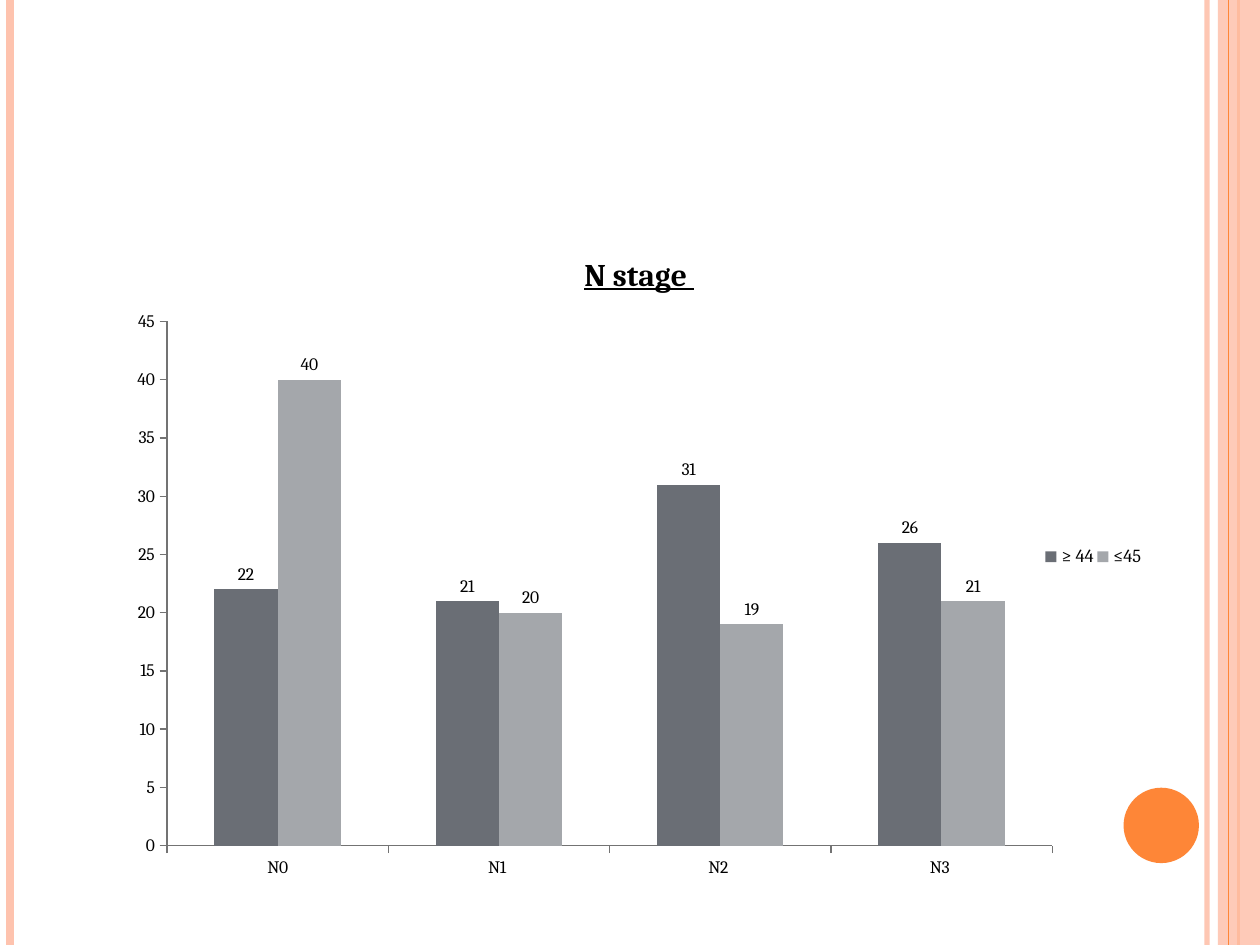
from lxml.etree import SubElement
from pptx import Presentation
from pptx.chart.data import CategoryChartData
from pptx.dml.color import RGBColor
from pptx.enum.chart import (XL_CHART_TYPE, XL_LABEL_POSITION,
                             XL_LEGEND_POSITION, XL_TICK_MARK)
from pptx.enum.shapes import MSO_CONNECTOR, MSO_SHAPE
from pptx.oxml.ns import qn
from pptx.util import Cm, Pt

WIDE, HIGH = 25.4, 19.05
PINK, ORANGE, GREY, BLACK = "FEC3AE", "FE8637", "737373", "000000"


def color(code):
    return RGBColor.from_string(code)


def fade(fill, percent):
    """Set the opacity of a solid fill element."""
    SubElement(fill[0], qn("a:alpha"), val=str(percent * 1000))


def place(part, index, **box):
    """Give a chart part a manual layout, in fractions of the chart."""
    for old in part.findall(qn("c:layout")):
        part.remove(old)
    layout = SubElement(part, qn("c:layout"))
    part.insert(index, layout)
    manual = SubElement(layout, qn("c:manualLayout"))
    if part.tag == qn("c:plotArea"):
        SubElement(manual, qn("c:layoutTarget"), val="inner")
    for mode in ("xMode", "yMode"):
        SubElement(manual, qn(f"c:{mode}"), val="edge")
    for name, value in box.items():
        SubElement(manual, qn(f"c:{name}"), val=str(value))


class Deck:
    font = "Cambria"

    def __init__(self):
        self.show = Presentation()
        self.show.slide_width, self.show.slide_height = Cm(WIDE), Cm(HIGH)
        self.slide = self.show.slides.add_slide(self.show.slide_layouts[6])

    def rule(self, x, code, width, alpha=100):
        """Draw a line down the full height of the slide."""
        line = self.slide.shapes.add_connector(
            MSO_CONNECTOR.STRAIGHT, Cm(x), Cm(0), Cm(x), Cm(HIGH))
        line.line.color.rgb = color(code)
        line.line.width = Pt(width)
        props = line._element.spPr
        SubElement(props, qn("a:effectLst"))
        if alpha < 100:
            fade(props.find(qn("a:ln")).find(qn("a:solidFill")), alpha)

    def shape(self, kind, x, y, w, h, code, alpha=100):
        item = self.slide.shapes.add_shape(kind, Cm(x), Cm(y), Cm(w), Cm(h))
        item.shadow.inherit = False
        item.fill.solid()
        item.fill.fore_color.rgb = color(code)
        item.line.fill.background()
        if alpha < 100:
            fade(item._element.spPr.find(qn("a:solidFill")), alpha)

    def style(self, font, size, bold=False):
        font.name, font.size, font.bold = self.font, Pt(size), bold
        font.color.rgb = color(BLACK)

    def chart(self, x, y, w, h, title, cats, series):
        data = CategoryChartData()
        data.categories = cats
        for name, values, _ in series:
            data.add_series(name, values)
        chart = self.slide.shapes.add_chart(
            XL_CHART_TYPE.COLUMN_CLUSTERED, Cm(x), Cm(y), Cm(w), Cm(h),
            data).chart
        self.style(chart.font, 10)
        self.title(chart, title)
        self.bars(chart.plots[0], series)
        for axis in (chart.category_axis, chart.value_axis):
            axis.has_major_gridlines = False
            axis.major_tick_mark = XL_TICK_MARK.OUTSIDE
            axis.minor_tick_mark = XL_TICK_MARK.NONE
            axis.format.line.color.rgb = color(GREY)
            self.style(axis.tick_labels.font, 10)
        chart.value_axis.minimum_scale = 0
        chart.value_axis.maximum_scale = 45
        chart.value_axis.major_unit = 5
        self.legend(chart)
        area = chart._chartSpace.chart.plotArea
        place(area, 0, x=0.05, y=0.15, w=0.86, h=0.78)

    def title(self, chart, text):
        chart.has_title = True
        head = chart.chart_title
        head.text_frame.text = text
        font = head.text_frame.paragraphs[0].runs[0].font
        self.style(font, 18, True)
        font.underline = True
        part = head._element
        place(part, 1, x=0.45, y=0.04)
        part.find(qn("c:overlay")).set("val", "1")

    def bars(self, plot, series):
        plot.gap_width, plot.overlap = 150, 0
        plot.vary_by_categories = False
        for bar, (_, _, code) in zip(plot.series, series):
            bar.format.fill.solid()
            bar.format.fill.fore_color.rgb = color(code)
        plot.has_data_labels = True
        labels = plot.data_labels
        labels.show_value = True
        labels.position = XL_LABEL_POSITION.OUTSIDE_END
        self.style(labels.font, 10)

    def legend(self, chart):
        chart.has_legend = True
        legend = chart.legend
        legend.position = XL_LEGEND_POSITION.RIGHT
        legend.include_in_layout = False
        self.style(legend.font, 10.5)
        place(legend._element, 1, x=0.9, y=0.48, w=0.1, h=0.04)


def main():
    deck = Deck()
    deck.rule(24.33, PINK, 3, 93)
    deck.rule(0.2, PINK, 4.5)
    deck.rule(24.97, ORANGE, 1.5)
    deck.shape(MSO_SHAPE.RECTANGLE, 24.55, 0, 0.85, HIGH, PINK, 87)
    deck.rule(24.77, ORANGE, 0.75)
    deck.shape(MSO_SHAPE.OVAL, 22.65, 15.88, 1.52, 1.52, ORANGE)
    deck.chart(2.33, 4.45, 20.75, 13.55, "N stage ",
               ("N0", "N1 ", "N2 ", "N3 "),
               (("≥ 44", (22, 21, 31, 26), "6A6E75"),
                ("≤45", (40, 20, 19, 21), "A4A7AB")))
    deck.show.save("out.pptx")


if __name__ == "__main__":
    main()
